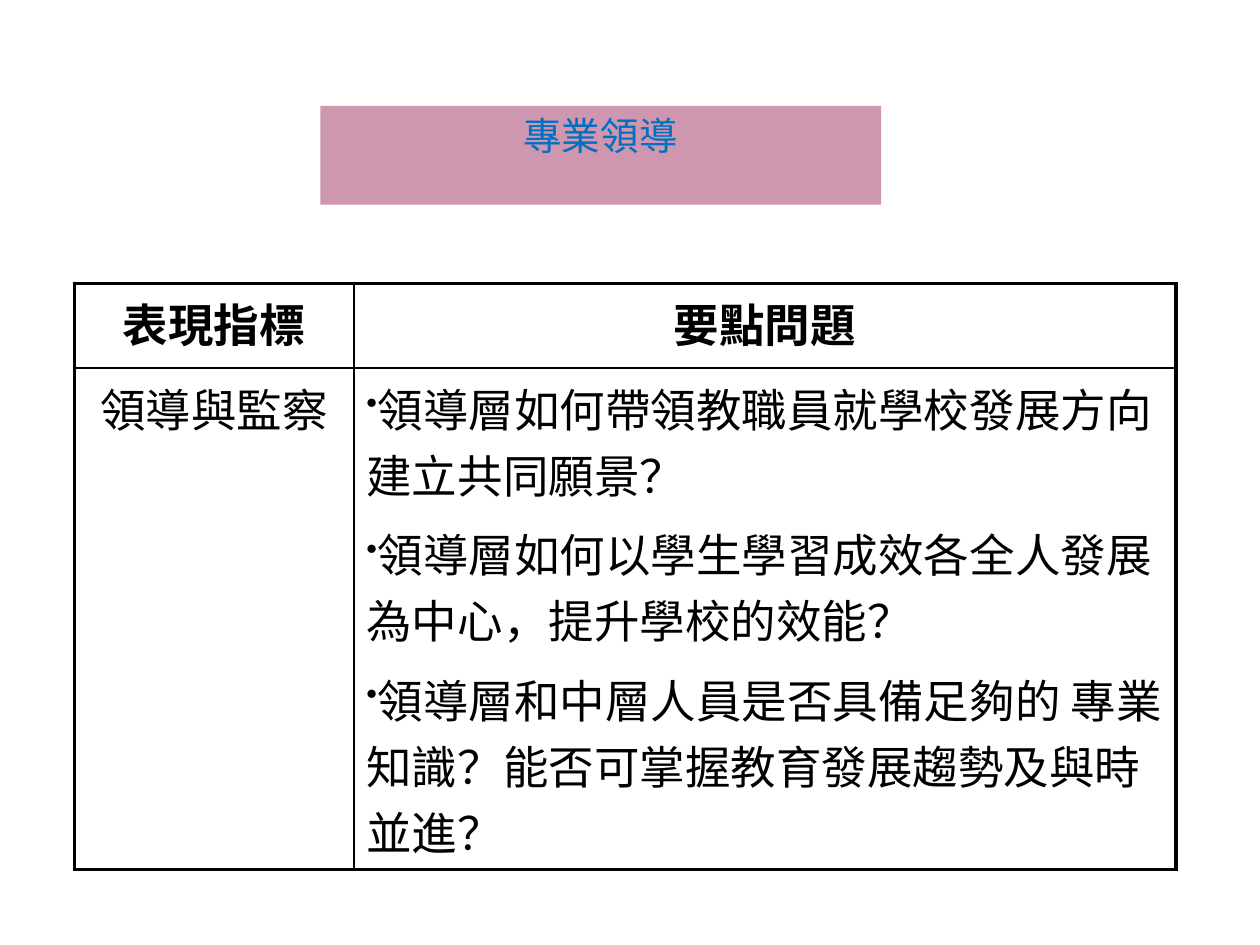
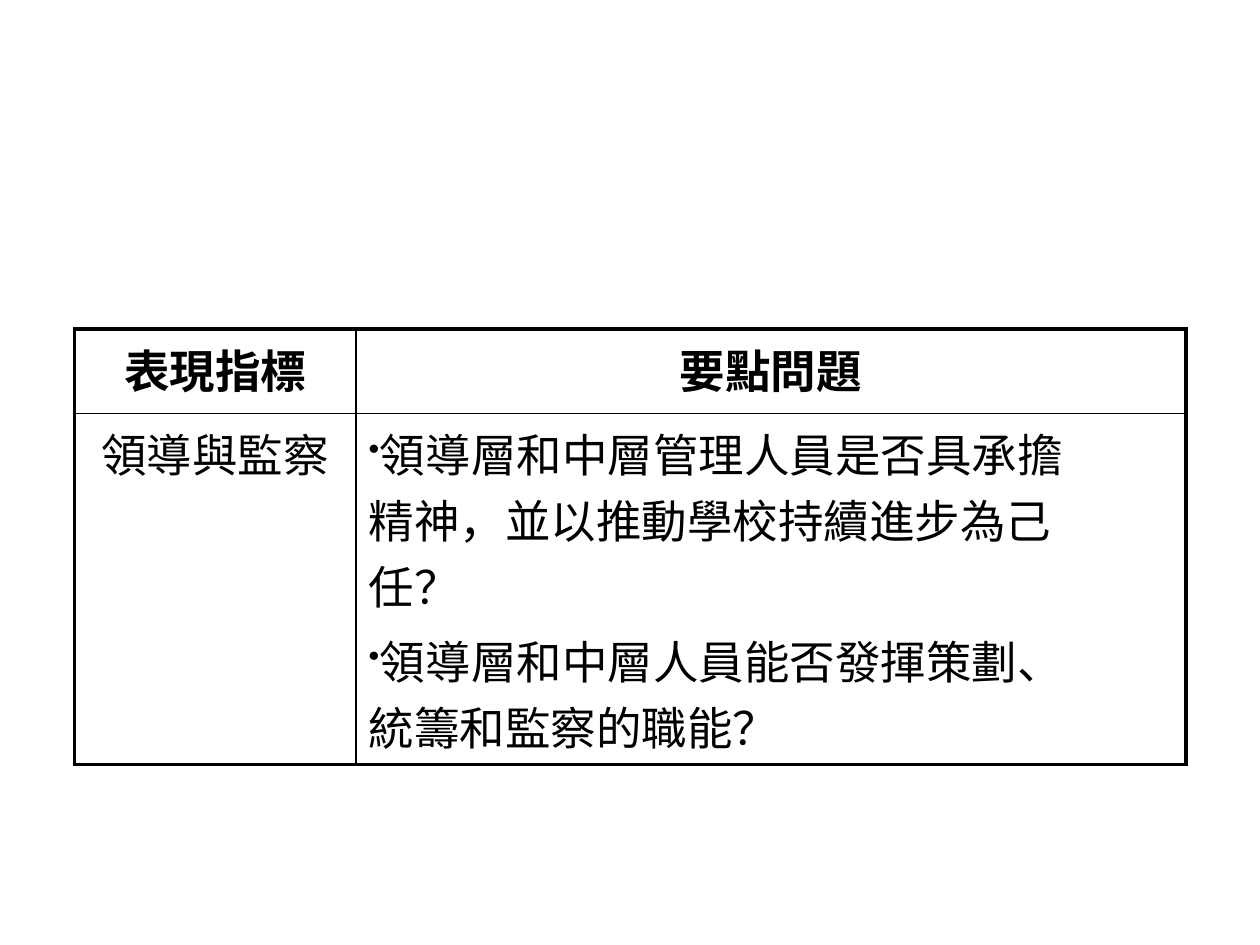
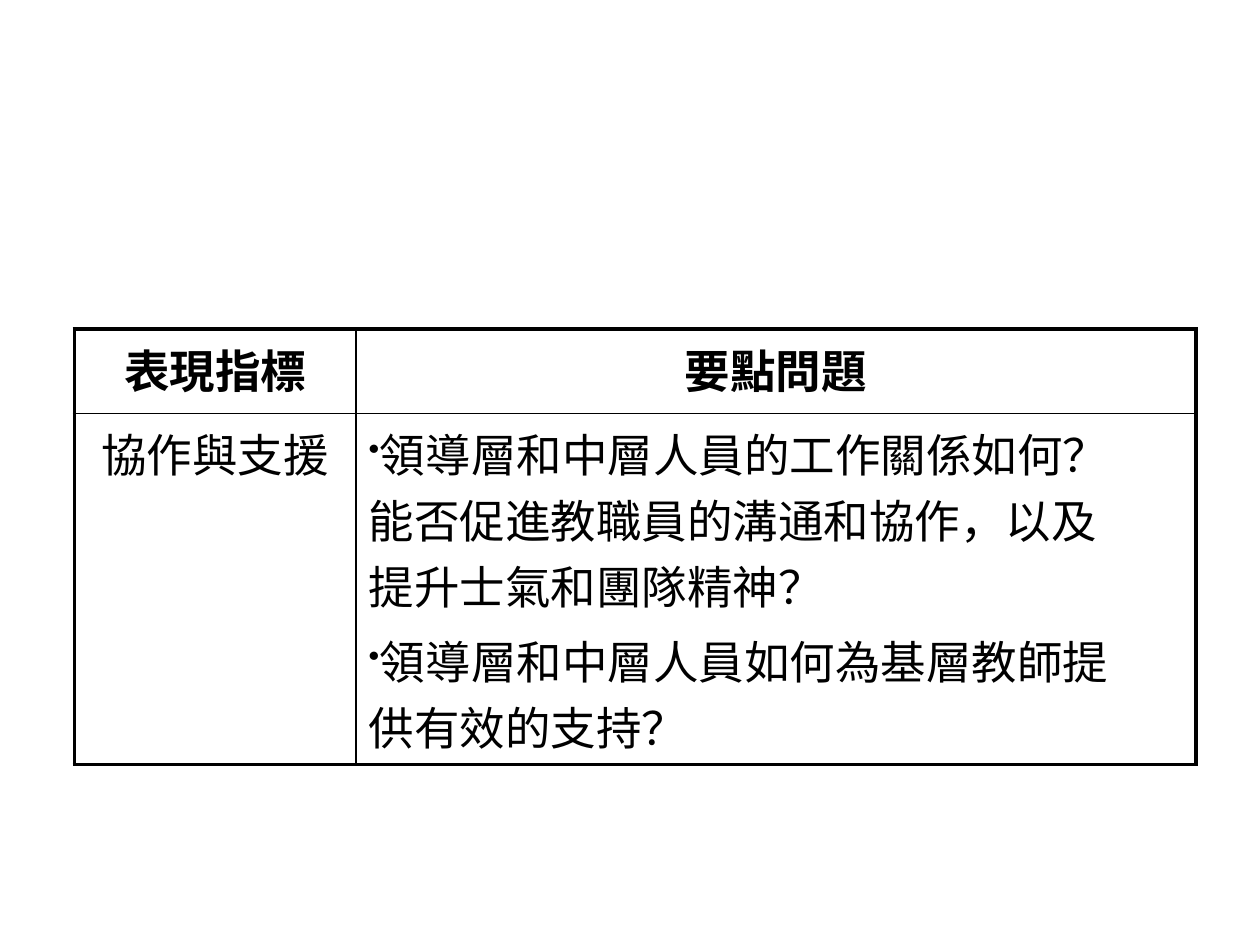
from dataclasses import dataclass
from typing import Any, Optional

from pptx import Presentation
from pptx.dml.color import RGBColor
from pptx.enum.shapes import MSO_SHAPE as Shape
from pptx.enum.text import MSO_ANCHOR as Anchor, PP_ALIGN as Align
from pptx.oxml import parse_xml
from pptx.oxml.ns import nsdecls, qn
from pptx.slide import Slide
from pptx.table import _Cell as Cell
from pptx.text.text import TextFrame
from pptx.util import Pt
from lxml.etree import SubElement


# Shared look
@dataclass(frozen=True)
class Theme:
    font: str = "Noto Sans CJK SC"
    ink: str = "000000"
    title_ink: str = "0070C0"
    band: str = "CF96B0"
    title_size: float = 22
    table_size: float = 26
    bullet_percent: int = 70
    outer_rule: float = 2.25
    inner_rule: float = 1


THEME = Theme()
HEADINGS = ("表現指標", "要點問題")
TABLE_LEFT = 42.5
HEADER_HEIGHT = 48.25


@dataclass(frozen=True)
class Line:
    text: str
    bullet: bool = False
    align: Optional[Align] = None
    before: float = 0  # share of the type size
    after: float = 0
    bold: bool = False


@dataclass(frozen=True)
class IndicatorTable:
    top: float
    columns: tuple[float, float]
    body_height: float
    indicator: str
    questions: tuple[Line, ...]


@dataclass(frozen=True)
class Section:
    table: IndicatorTable
    title: Optional[str] = None


# Content
SECTIONS = (
    Section(
        title="專業領導",
        table=IndicatorTable(162, (159.75, 469.75), 244, "領導與監察", (
            Line("領導層如何帶領教職員就學校發展方向建立共同願景？", bullet=True, after=0.3),
            Line("領導層如何以學生學習成效各全人發展為中心，提升學校的效能？",
                 bullet=True, after=0.3),
            Line("領導層和中層人員是否具備足夠的 專業知識？能否可掌握教育發展趨勢及與時並進？",
                 bullet=True, after=0.3),
        )),
    ),
    Section(IndicatorTable(188, (161, 474.25), 169.25, "領導與監察", (
        Line("領導層和中層管理人員是否具承擔", bullet=True, align=Align.JUSTIFY),
        Line("精神，並以推動學校持續進步為己", align=Align.JUSTIFY),
        Line("任？", align=Align.JUSTIFY, after=0.2),
        Line("領導層和中層人員能否發揮策劃、", bullet=True),
        Line("統籌和監察的職能？"),
    ))),
    Section(IndicatorTable(188, (161, 480), 169.25, "協作與支援", (
        Line("領導層和中層人員的工作關係如何？", bullet=True),
        Line("能否促進教職員的溝通和協作，以及"),
        Line("提升士氣和團隊精神？", after=0.2),
        Line("領導層和中層人員如何為基層教師提", bullet=True),
        Line("供有效的支持？"),
    ))),
)


def apply(target: Any, values: dict[str, Any]) -> None:
    for name, value in values.items():
        setattr(target, name, value)


# Text
def add_bullet(para: Any) -> None:
    properties = para._p.get_or_add_pPr()
    color = SubElement(properties, qn("a:buClr"))
    SubElement(color, qn("a:srgbClr"), val=THEME.ink)
    SubElement(properties, qn("a:buSzPct"), val=str(THEME.bullet_percent * 1000))
    SubElement(properties, qn("a:buChar"), char="•")


def write_lines(frame: TextFrame, lines: tuple[Line, ...], size: float,
                color: str, tracking: float = 0) -> None:
    for index, line in enumerate(lines):
        para = frame.add_paragraph() if index else frame.paragraphs[0]
        apply(para, {
            "alignment": line.align,
            "space_before": Pt(line.before * size),
            "space_after": Pt(line.after * size),
        })
        if line.bullet:
            add_bullet(para)
        span = para.add_run()
        span.text = line.text
        apply(span.font, {"name": THEME.font, "size": Pt(size), "bold": line.bold})
        span.font.color.rgb = RGBColor.from_string(color)
        properties = span._r.get_or_add_rPr()
        SubElement(properties, qn("a:ea"), typeface=THEME.font)
        if tracking:
            properties.set("spc", str(round(tracking * 100)))


# Title band
def draw_title(page: Slide, title: str) -> None:
    box = page.shapes.add_shape(Shape.RECTANGLE, Pt(183), Pt(60.5), Pt(320.5), Pt(56.5))
    box.shadow.inherit = False
    box.fill.solid()
    box.fill.fore_color.rgb = RGBColor.from_string(THEME.band)
    box.line.fill.background()
    apply(box.text_frame, {"word_wrap": True, "vertical_anchor": Anchor.TOP})
    line = Line(title, align=Align.CENTER, before=6 / THEME.title_size)
    write_lines(box.text_frame, (line,), THEME.title_size, THEME.title_ink, tracking=0.3)


# Table
def rule_cell(cell: Cell, row: int, column: int) -> None:
    """Heavy rules on the outside of the two-by-two grid, thin ones inside."""
    outer = {"L": column == 0, "R": column == 1, "T": row == 0, "B": row == 1}
    properties = cell._tc.get_or_add_tcPr()
    for side, is_outer in outer.items():
        width = Pt(THEME.outer_rule if is_outer else THEME.inner_rule)
        properties.append(parse_xml(
            f'<a:ln{side} {nsdecls("a")} w="{width}"><a:solidFill>'
            f'<a:srgbClr val="{THEME.ink}"/></a:solidFill></a:ln{side}>'))
    cell.fill.background()


def draw_table(page: Slide, item: IndicatorTable) -> None:
    heights = (HEADER_HEIGHT, item.body_height)
    table = page.shapes.add_table(
        2, 2, Pt(TABLE_LEFT), Pt(item.top), Pt(sum(item.columns)), Pt(sum(heights))).table
    apply(table, {"first_row": False, "horz_banding": False})
    for column, width in zip(table.columns, item.columns):
        column.width = Pt(width)
    for row, height in zip(table.rows, heights):
        row.height = Pt(height)

    headings = [(Line(text, align=Align.CENTER, before=0.2, bold=True),) for text in HEADINGS]
    indicator = (Line(item.indicator, align=Align.CENTER, before=0.2),)
    for row, contents in enumerate((headings, (indicator, item.questions))):
        for column, lines in enumerate(contents):
            cell = table.cell(row, column)
            write_lines(cell.text_frame, lines, THEME.table_size, THEME.ink)
            rule_cell(cell, row, column)


def main() -> None:
    deck = Presentation()
    apply(deck, {"slide_width": Pt(720), "slide_height": Pt(540)})
    for section in SECTIONS:
        page = deck.slides.add_slide(deck.slide_layouts[6])
        if section.title:
            draw_title(page, section.title)
        draw_table(page, section.table)
    deck.save("out.pptx")


if __name__ == "__main__":
    main()
